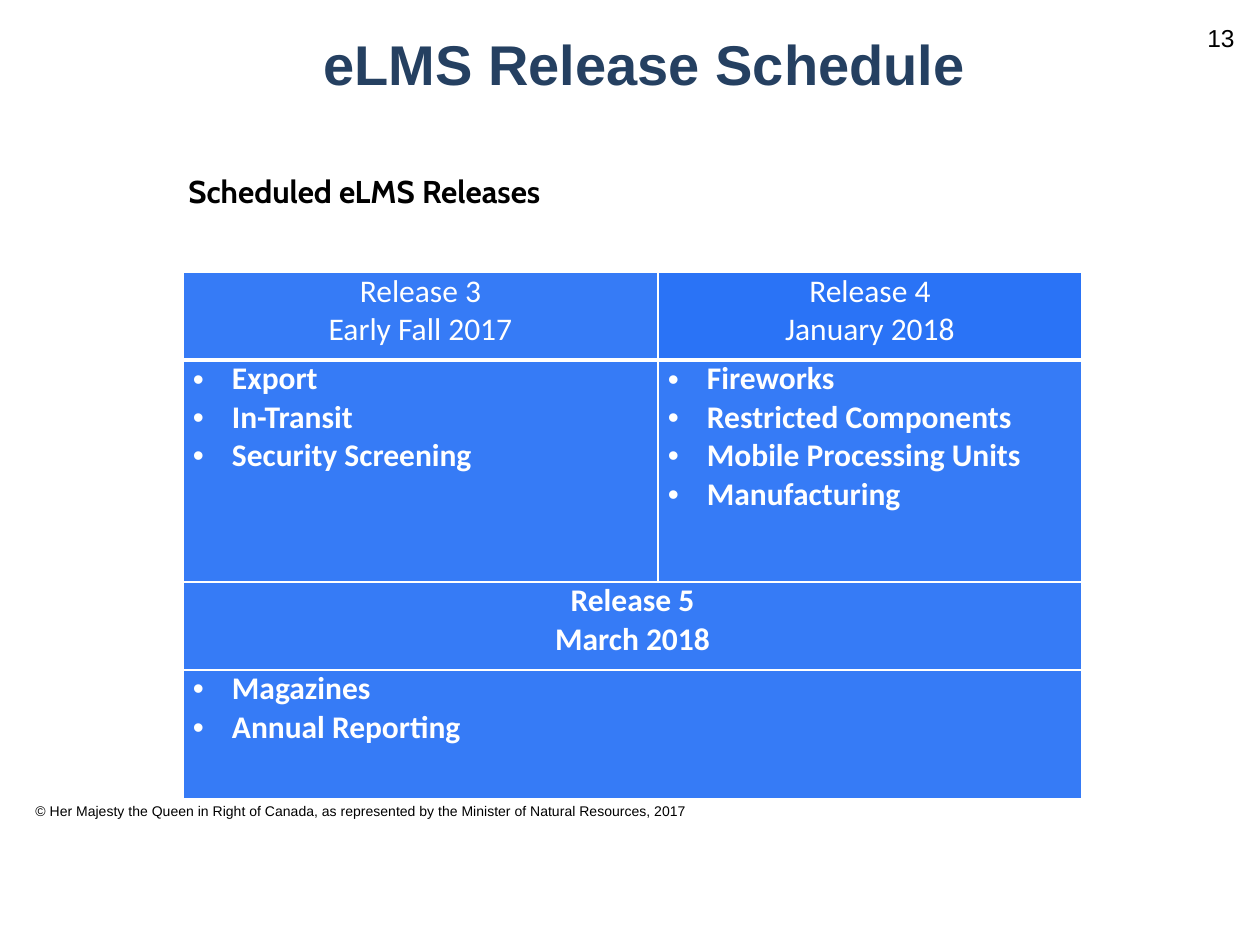
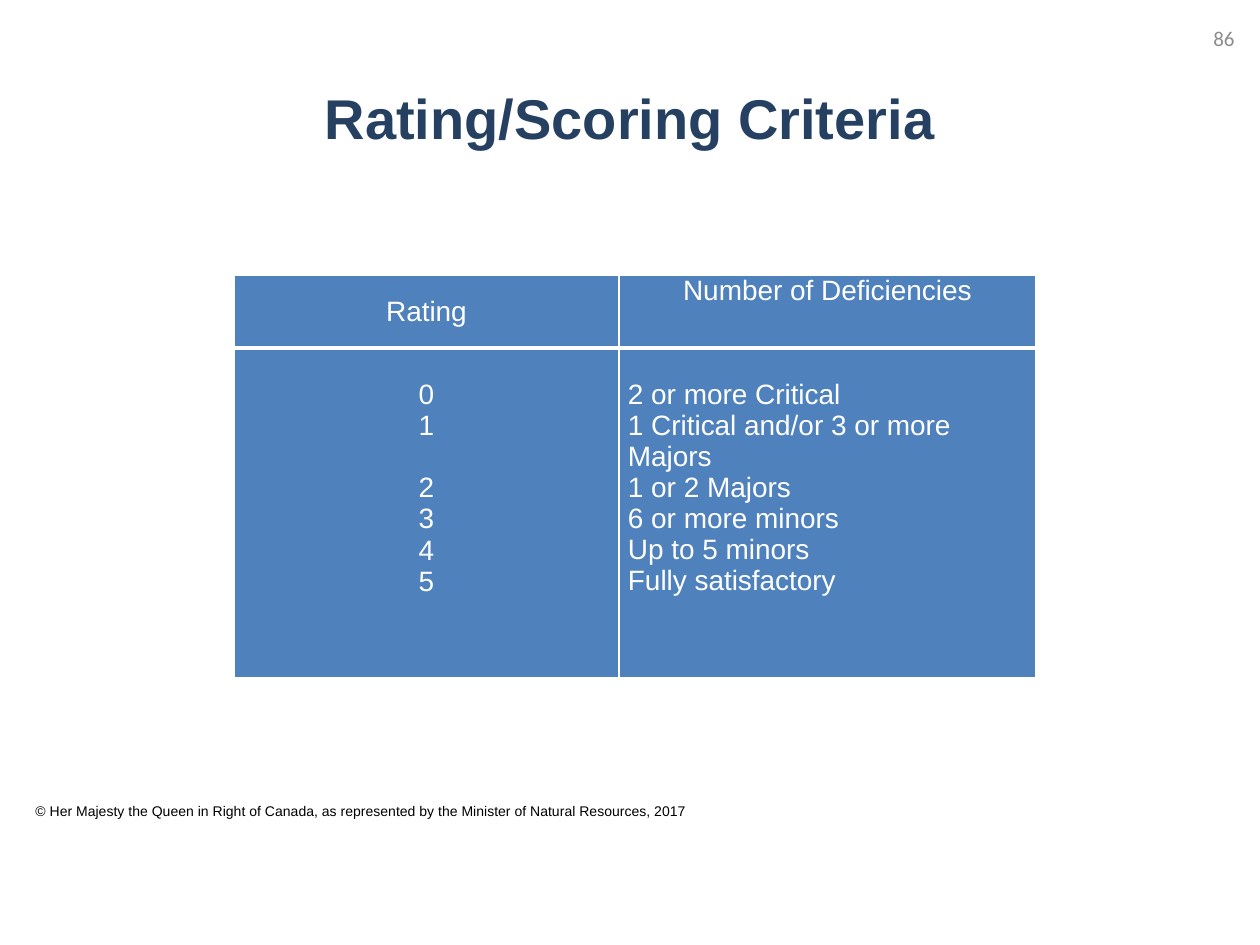
from dataclasses import dataclass
from typing import Optional

from lxml.etree import SubElement
from pptx import Presentation
from pptx.dml.color import RGBColor
from pptx.enum.text import MSO_ANCHOR as Anchor, PP_ALIGN as Align
from pptx.oxml.ns import qn
from pptx.util import Emu, Pt

PX_PER_INCH = 126
COLORS = {
    "title": "254061",
    "ink": "000000",
    "muted": "8C8C8C",
    "white": "FFFFFF",
    "release": "367BF6",
    "release_4": "2A73F6",
    "rating": "4F81BD",
}
COPYRIGHT = (
    "© Her Majesty the Queen in Right of Canada, "
    "as represented by the Minister of Natural Resources, 2017"
)
BULLET_INDENT = 39
THIN, THICK = 1, 3


@dataclass(frozen=True)
class Box:
    left: int
    top: int
    width: int
    height: int


@dataclass(frozen=True)
class Style:
    font: str
    size: int
    color: str
    bold: bool = False
    align: Align = Align.LEFT


@dataclass(frozen=True)
class Cell:
    row: int
    column: int
    lines: tuple[str, ...]
    style: Style
    fill: str
    bulleted: bool = False
    columns_spanned: int = 1
    anchor: Anchor = Anchor.TOP
    margin_top: int = 0
    gap_after: Optional[int] = None
    top_border: int = THIN
    bottom_border: int = THIN


@dataclass(frozen=True)
class Grid:
    left: int
    top: int
    columns: tuple[int, ...]
    rows: tuple[int, ...]
    side_margin: int
    cells: tuple[Cell, ...]


TITLE = Style("Arial", 32, "title", True, Align.CENTER)
FOOTER = Style("Arial", 8, "ink")
SUBHEADING = Style("Cabin", 18, "ink", True)
RELEASE_HEAD = Style("Calibri", 18, "white", align=Align.CENTER)
RELEASE_HEAD_BOLD = Style("Calibri", 18, "white", True, Align.CENTER)
RELEASE_ITEM = Style("Calibri", 18, "white", True)
RATING_CENTERED = Style("Arial", 16, "white", align=Align.CENTER)
RATING_LEFT = Style("Arial", 16, "white")

FOOTER_BOX = Box(23, 796, 686, 47)
NUMBER_BOX = Box(1183, 13, 64, 50)

RELEASES = Grid(183, 272, (475, 424), (88, 222, 88, 129), 10, (
    Cell(0, 0, ("Release 3", "Early Fall 2017"), RELEASE_HEAD, "release",
         bottom_border=THICK),
    Cell(0, 1, ("Release 4", "January 2018"), RELEASE_HEAD, "release_4",
         bottom_border=THICK),
    Cell(1, 0, ("Export", "In-Transit", "Security Screening"),
         RELEASE_ITEM, "release", bulleted=True),
    Cell(1, 1, ("Fireworks", "Restricted Components",
                "Mobile Processing Units", "Manufacturing"),
         RELEASE_ITEM, "release", bulleted=True),
    Cell(2, 0, ("Release 5", "March 2018"), RELEASE_HEAD_BOLD, "release",
         columns_spanned=2),
    Cell(3, 0, ("Magazines", "Annual Reporting"), RELEASE_ITEM, "release",
         bulleted=True, columns_spanned=2),
))

RATINGS = Grid(234, 275, (385, 417), (73, 330), 9, (
    Cell(0, 0, ("Rating",), RATING_CENTERED, "rating",
         anchor=Anchor.MIDDLE, bottom_border=THICK),
    Cell(0, 1, ("Number of Deficiencies",), RATING_CENTERED, "rating",
         bottom_border=THICK),
    Cell(1, 0, ("0", "1", "2", "3", "4", "5"), RATING_CENTERED, "rating",
         margin_top=31, gap_after=1, top_border=THICK),
    Cell(1, 1, ("2 or more Critical", "1 Critical and/or 3 or more Majors",
                "1 or 2 Majors", "6 or more minors", "Up to 5 minors",
                "Fully satisfactory"),
         RATING_LEFT, "rating", margin_top=31, top_border=THICK),
))


def px(length: int) -> Emu:
    return Emu(round(length * 914400 / PX_PER_INCH))


def rgb(name: str) -> RGBColor:
    return RGBColor.from_string(COLORS[name])


def place(shape, box: Box) -> None:
    shape.left, shape.top = px(box.left), px(box.top)
    shape.width, shape.height = px(box.width), px(box.height)


def format_paragraph(paragraph, style: Style) -> None:
    paragraph.alignment = style.align
    for run in paragraph.runs:
        run.font.name = style.font
        run.font.size = Pt(style.size)
        run.font.bold = style.bold
        run.font.color.rgb = rgb(style.color)


def add_bullet(paragraph) -> None:
    properties = paragraph._p.get_or_add_pPr()
    properties.set("marL", str(px(BULLET_INDENT)))
    properties.set("indent", str(-px(BULLET_INDENT)))
    SubElement(properties, qn("a:buFont"), typeface="Arial")
    SubElement(properties, qn("a:buChar"), char="•")


def add_label(slide, text: str, box: Box, style: Style,
              anchor: Anchor = Anchor.TOP) -> None:
    label = slide.shapes.add_textbox(0, 0, 0, 0)
    place(label, box)
    frame = label.text_frame
    frame.word_wrap = True
    frame.vertical_anchor = anchor
    frame.text = text
    format_paragraph(frame.paragraphs[0], style)


def set_borders(cell, top: int, bottom: int) -> None:
    properties = cell._tc.get_or_add_tcPr()
    for side, width in zip("LRTB", (THIN, THIN, top, bottom)):
        line = SubElement(properties, qn(f"a:ln{side}"), w=str(Pt(width)))
        fill = SubElement(line, qn("a:solidFill"))
        SubElement(fill, qn("a:srgbClr"), val=COLORS["white"])


def fill_cell(table, content: Cell, side_margin: int) -> None:
    cell = table.cell(content.row, content.column)
    last_column = content.column + content.columns_spanned - 1
    if content.columns_spanned > 1:
        cell.merge(table.cell(content.row, last_column))
    for column in range(content.column, last_column + 1):
        part = table.cell(content.row, column)
        set_borders(part, content.top_border, content.bottom_border)
        part.fill.solid()
        part.fill.fore_color.rgb = rgb(content.fill)
    cell.margin_left = cell.margin_right = px(side_margin)
    cell.margin_top, cell.margin_bottom = px(content.margin_top), 0
    cell.vertical_anchor = content.anchor
    cell.text_frame.text = "\n".join(content.lines)
    for index, paragraph in enumerate(cell.text_frame.paragraphs):
        if content.bulleted:
            add_bullet(paragraph)
        if index == content.gap_after:
            paragraph.space_after = Pt(18)
        format_paragraph(paragraph, content.style)


def add_grid(slide, grid: Grid) -> None:
    table = slide.shapes.add_table(
        len(grid.rows), len(grid.columns), px(grid.left), px(grid.top),
        px(sum(grid.columns)), px(sum(grid.rows))).table
    table.first_row = table.horz_banding = False
    for column, width in zip(table.columns, grid.columns):
        column.width = px(width)
    for row, height in zip(table.rows, grid.rows):
        row.height = px(height)
    for content in grid.cells:
        fill_cell(table, content, grid.side_margin)


def add_slide(deck, title: str, title_box: Box, number: str,
              number_style: Style):
    slide = deck.slides.add_slide(deck.slide_layouts.get_by_name("Title Only"))
    heading = slide.shapes.title
    place(heading, title_box)
    heading.text_frame.text = title
    heading.text_frame.vertical_anchor = Anchor.MIDDLE
    format_paragraph(heading.text_frame.paragraphs[0], TITLE)
    add_label(slide, COPYRIGHT, FOOTER_BOX, FOOTER)
    add_label(slide, number, NUMBER_BOX, number_style, Anchor.MIDDLE)
    return slide


def main() -> None:
    deck = Presentation()
    deck.slide_width, deck.slide_height = px(1260), px(945)

    schedule = add_slide(deck, "eLMS Release Schedule", Box(71, 13, 1147, 101),
                         "13", Style("Arial", 14, "ink", align=Align.RIGHT))
    add_grid(schedule, RELEASES)
    add_label(schedule, "Scheduled eLMS Releases", Box(176, 166, 501, 50),
              SUBHEADING)

    criteria = add_slide(deck, "Rating/Scoring Criteria", Box(0, 38, 1260, 158),
                         "86", Style("Calibri", 12, "muted", align=Align.RIGHT))
    add_grid(criteria, RATINGS)

    deck.save("out.pptx")


if __name__ == "__main__":
    main()
